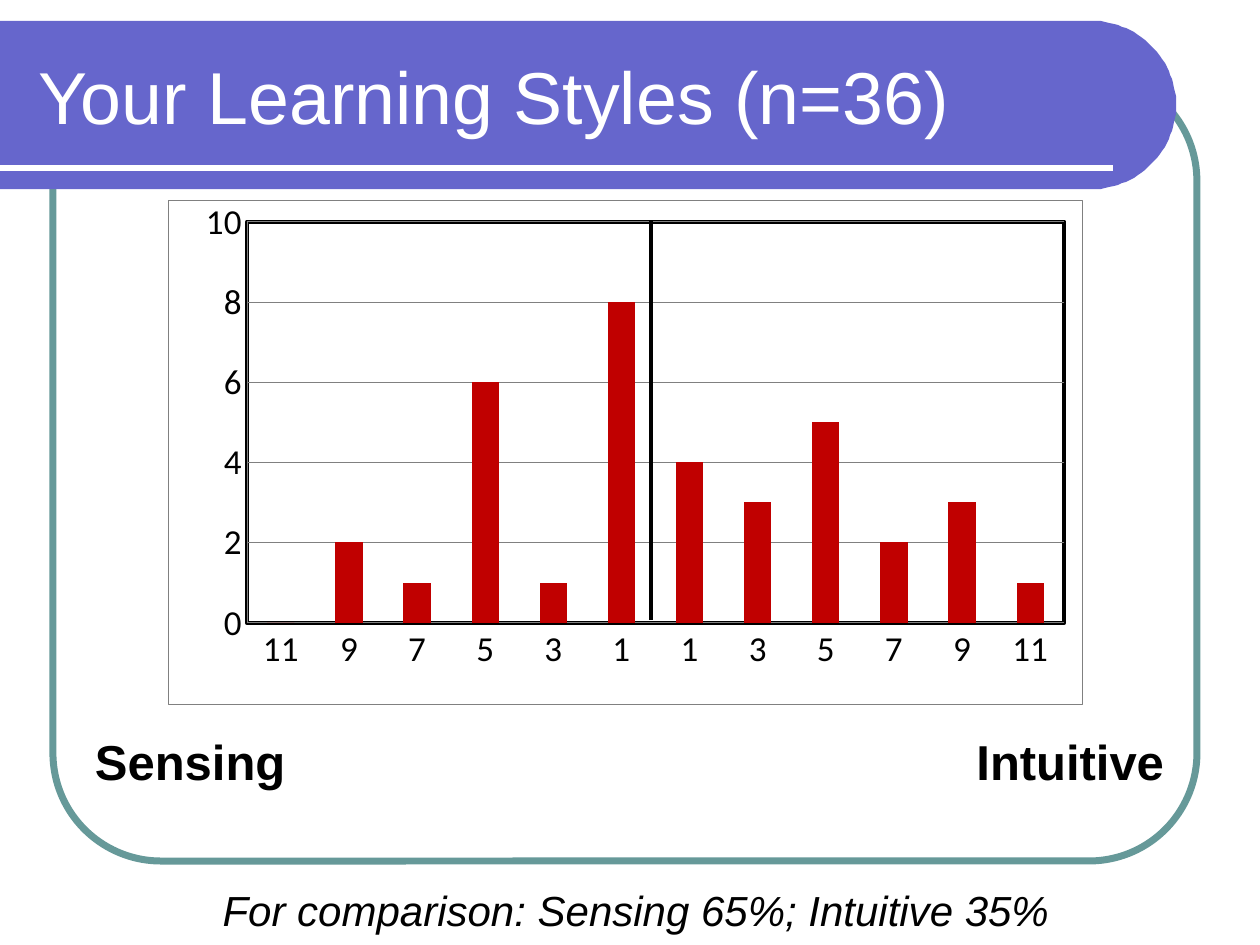
import math

from pptx import Presentation
from pptx.chart.data import CategoryChartData
from pptx.dml.color import RGBColor
from pptx.enum.chart import XL_CHART_TYPE, XL_TICK_MARK
from pptx.enum.shapes import MSO_CONNECTOR, MSO_SHAPE
from pptx.enum.text import MSO_ANCHOR, MSO_AUTO_SIZE, PP_ALIGN
from pptx.oxml import parse_xml
from pptx.oxml.ns import nsdecls, qn
from pptx.util import Pt

COLUMN_CLUSTERED = XL_CHART_TYPE.COLUMN_CLUSTERED
TICK_NONE, TICK_INSIDE = XL_TICK_MARK.NONE, XL_TICK_MARK.INSIDE
STRAIGHT = MSO_CONNECTOR.STRAIGHT
ROUNDED_RECTANGLE = MSO_SHAPE.ROUNDED_RECTANGLE
TOP, MIDDLE = MSO_ANCHOR.TOP, MSO_ANCHOR.MIDDLE
NO_AUTOSIZE = MSO_AUTO_SIZE.NONE
LEFT = PP_ALIGN.LEFT

# Content
TITLE = "Your Learning Styles (n=36)"
COMPARISON = "For comparison: Sensing 65%; Intuitive 35%"
POLES = ("Sensing", "Intuitive")
SCORES = ["11", "9", "7", "5", "3", "1", "1", "3", "5", "7", "9", "11"]
COUNTS = [0, 2, 1, 6, 1, 8, 4, 3, 5, 2, 3, 1]

# Colours
BLACK = RGBColor(0x00, 0x00, 0x00)
WHITE = RGBColor(0xFF, 0xFF, 0xFF)
VIOLET = RGBColor(0x66, 0x66, 0xCC)
TEAL = RGBColor(0x66, 0x99, 0x99)
GREY = RGBColor(0x80, 0x80, 0x80)
RED = RGBColor(0xC0, 0x00, 0x00)

# Geometry in px: left, top, width, height
SCALE = 914400 / 126
FRAME_BOX = (53, 73, 1144, 788)
BAND_BOX = (0, 21, 1176, 168)
TITLE_BOX = (26, 32, 1105, 126)
CHART_BOX = (168, 200, 914, 504)
POLES_BOX = (73, 725, 1113, 72)
COMPARISON_BOX = (210, 888, 935, 57)
POLES_INSET, POLES_WIDTH = 22, 1069
PLOT_LAYOUT = {"x": 0.086, "y": 0.042, "w": 0.895, "h": 0.797}


def px(*lengths):
    return [round(length * SCALE) for length in lengths]


def set_text(shape, text, box=None, size=24, color=BLACK, bold=False,
             italic=False, anchor=TOP):
    if box:
        shape.left, shape.top, shape.width, shape.height = px(*box)
    frame = shape.text_frame
    frame.word_wrap = True
    frame.auto_size = NO_AUTOSIZE
    frame.vertical_anchor = anchor
    paragraph = frame.paragraphs[0]
    paragraph.alignment = LEFT
    run = paragraph.add_run()
    run.text = text
    run.font.name = "Arial"
    run.font.size = Pt(size)
    run.font.bold = bold
    run.font.italic = italic
    run.font.color.rgb = color
    return paragraph


def add_line(slide, start, end, color, width):
    line = slide.shapes.add_connector(STRAIGHT, *px(*start, *end))
    line.line.color.rgb = color
    line.line.width = Pt(width)
    line._element.spPr.append(parse_xml(f"<a:effectLst {nsdecls('a')}/>"))


def add_band(slide):
    left, top, width, height = BAND_BOX
    radius = height / 2
    center_x, center_y = left + width - radius, top + radius
    arc = [(center_x + radius * math.cos(math.radians(angle)),
            center_y + radius * math.sin(math.radians(angle)))
           for angle in range(-90, 91, 3)]
    builder = slide.shapes.build_freeform(left, top, scale=SCALE)
    builder.add_line_segments(arc + [(left, top + height)], close=True)
    band = builder.convert_to_shape()
    band.shadow.inherit = False
    band.fill.solid()
    band.fill.fore_color.rgb = VIOLET
    band.line.fill.background()


def format_axis(axis, tick):
    axis.major_tick_mark = tick
    axis.minor_tick_mark = TICK_NONE
    axis.format.line.color.rgb = GREY
    axis.format.line.width = Pt(0.25)


def area_format(line_color, line_width):
    return parse_xml(
        f"<c:spPr {nsdecls('c', 'a')}>"
        f'<a:solidFill><a:srgbClr val="{WHITE}"/></a:solidFill>'
        f'<a:ln w="{Pt(line_width)}"><a:solidFill><a:srgbClr val="{line_color}"/>'
        "</a:solidFill></a:ln></c:spPr>")


def add_score_chart(slide):
    data = CategoryChartData()
    data.categories = SCORES
    data.add_series("Series 1", COUNTS)
    chart = slide.shapes.add_chart(COLUMN_CLUSTERED, *px(*CHART_BOX), data).chart
    chart.has_legend = False
    chart.has_title = False
    chart.font.name = "Calibri"
    chart.font.size = Pt(20)
    chart.font.color.rgb = BLACK

    # Columns and axes
    plot = chart.plots[0]
    plot.gap_width = 150
    plot.vary_by_categories = False
    fill = plot.series[0].format.fill
    fill.solid()
    fill.fore_color.rgb = RED
    format_axis(chart.category_axis, TICK_NONE)
    value_axis = chart.value_axis
    format_axis(value_axis, TICK_INSIDE)
    value_axis.minimum_scale, value_axis.maximum_scale = 0, 10
    value_axis.major_unit = 2
    gridline = value_axis.major_gridlines.format.line
    gridline.color.rgb = GREY
    gridline.width = Pt(0.25)

    # Chart area, plot area and its inner layout
    chart_element = chart._chartSpace.find(qn("c:chart"))
    chart_element.addnext(area_format(GREY, 0.25))
    plot_area = chart_element.find(qn("c:plotArea"))
    plot_area.append(area_format(BLACK, 2.25))
    for layout in plot_area.findall(qn("c:layout")):
        plot_area.remove(layout)
    modes = "".join(f'<c:{side}Mode val="edge"/>' for side in "xy")
    sizes = "".join(f'<c:{key} val="{value}"/>' for key, value in PLOT_LAYOUT.items())
    plot_area.insert(0, parse_xml(
        f"<c:layout {nsdecls('c')}><c:manualLayout>"
        f'<c:layoutTarget val="inner"/>{modes}{sizes}</c:manualLayout></c:layout>'))


def main():
    presentation = Presentation()
    presentation.slide_width, presentation.slide_height = px(1260, 945)
    slide = presentation.slides.add_slide(presentation.slide_layouts[1])
    title, comparison = slide.placeholders

    # Frame and title band
    frame = slide.shapes.add_shape(ROUNDED_RECTANGLE, *px(*FRAME_BOX))
    frame.adjustments[0] = 0.137
    frame.shadow.inherit = False
    frame.fill.background()
    frame.line.color.rgb = TEAL
    frame.line.width = Pt(4)
    add_band(slide)
    add_line(slide, (0, 168), (1113, 168), WHITE, 3)

    # Placeholders, brought in front of the band
    for placeholder in (comparison, title):
        slide.shapes._spTree.append(placeholder._element)
    set_text(title, TITLE, TITLE_BOX, size=42, color=WHITE, anchor=MIDDLE)
    paragraph = set_text(comparison, COMPARISON, COMPARISON_BOX, italic=True)
    paragraph.line_spacing = 0.8
    paragraph.space_before = Pt(5)
    properties = paragraph._p.get_or_add_pPr()
    properties.set("marL", "0")
    properties.set("indent", "0")
    properties.append(parse_xml(f"<a:buNone {nsdecls('a')}/>"))

    # Names of the two poles, the second on a right tab
    poles = slide.shapes.add_textbox(*px(*POLES_BOX))
    paragraph = set_text(poles, "\t".join(POLES), size=28, bold=True)
    poles.text_frame.margin_left = px(POLES_INSET)[0]
    paragraph._p.get_or_add_pPr().append(parse_xml(
        f"<a:tabLst {nsdecls('a')}>"
        f'<a:tab pos="{px(POLES_WIDTH)[0]}" algn="r"/></a:tabLst>'))

    # Chart with its dividing line
    add_score_chart(slide)
    add_line(slide, (651, 620), (651, 220), BLACK, 2.25)
    presentation.save("out.pptx")


if __name__ == "__main__":
    main()
